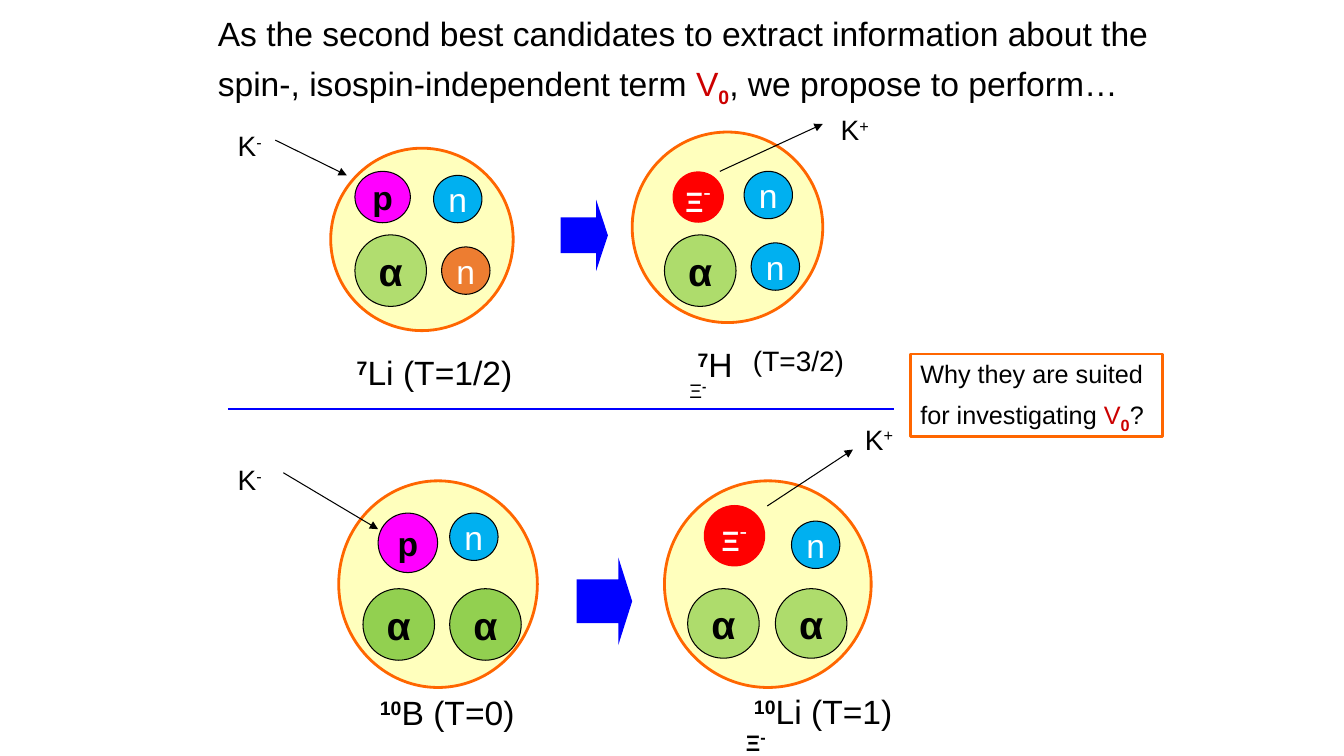
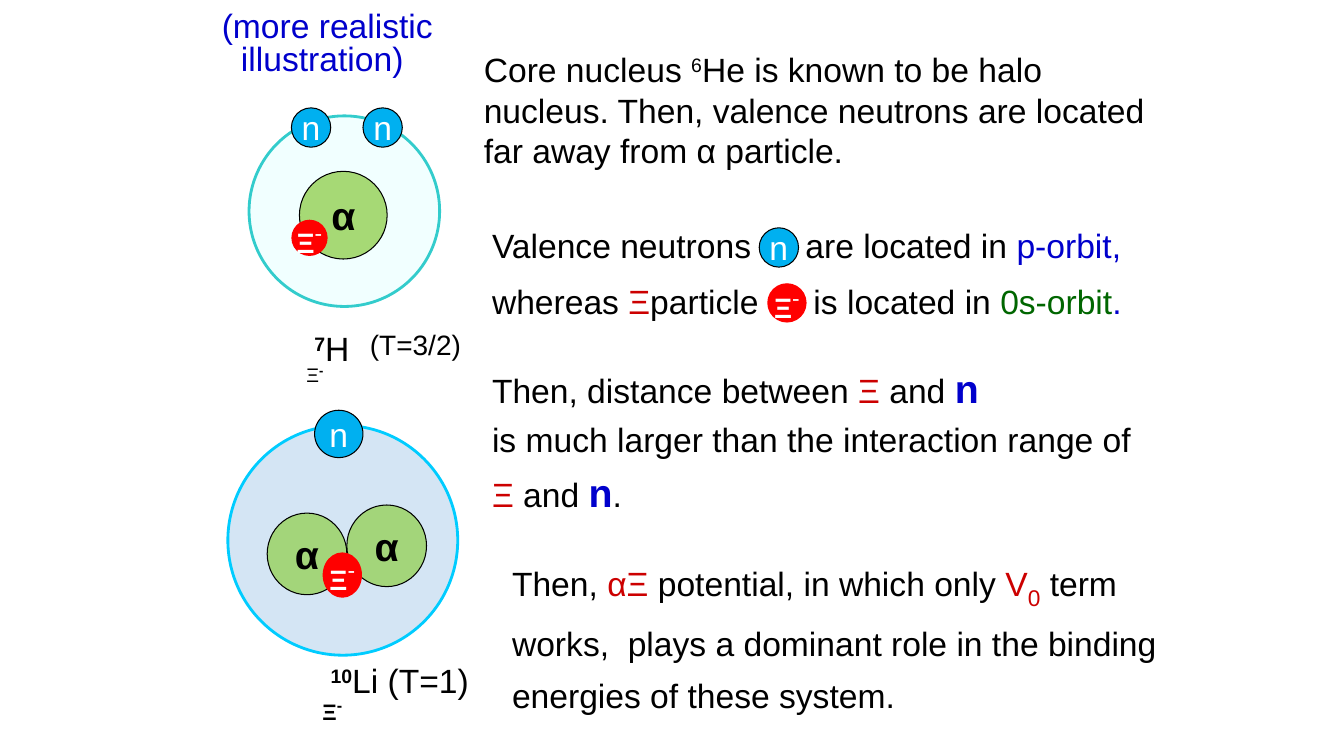
from lxml import etree
from pptx import Presentation
from pptx import util as u
from pptx.dml.color import RGBColor
from pptx.enum import shapes, text
from pptx.oxml import ns

BLACK, WHITE, RED, BLUE = "000000", "FFFFFF", "CC0000", "0000CC"
ORANGE, ARROW_BLUE, GREEN = "FF6600", "0000FF", "006600"
BASE = {"size": 24, "color": BLACK, "bold": False, "name": "Arial"}

# Run formats that recur
SUP = {"baseline": 30}
MASS = {"baseline": 30, "bold": True}
STRONG_N = {"size": 28, "color": BLUE, "bold": True}
XI_RUNS = [("Ξ", {"size": 20, "bold": True, "color": WHITE}),
           ("-", {"size": 28, "color": WHITE, "baseline": 30})]

# kind: (fill, outline, runs)
PARTICLES = {
    "alpha": ("92D050", BLACK, [("α", {"size": 28, "bold": True})]),
    "proton": ("FF00FF", BLACK, [("p", {"bold": True})]),
    "neutron": ("00B0F0", BLACK, [("n", {"color": WHITE})]),
    "struck": ("ED7D31", BLACK, [("n", {"color": WHITE})]),
    "xi": ("FF0000", None, XI_RUNS),
}


def rgb(value):
    return RGBColor.from_string(value)


def inches(*values):
    return [u.Inches(value) for value in values]


def add_xml(parent, tag, **attributes):
    return etree.SubElement(parent, ns.qn(tag), attributes)


# ---- Text ----
def write(frame, paragraphs, wrap=False, anchor=text.MSO_ANCHOR.TOP,
          align=text.PP_ALIGN.LEFT):
    """Each paragraph is (runs, options); each run is (words, format)."""
    settings = {"word_wrap": wrap, "vertical_anchor": anchor,
                "auto_size": text.MSO_AUTO_SIZE.NONE}
    for name, value in settings.items():
        setattr(frame, name, value)
    for index, (runs, options) in enumerate(paragraphs):
        para = frame.paragraphs[0] if index == 0 else frame.add_paragraph()
        layout = {"alignment": align, "line_spacing": options.get("line", 1.0),
                  "space_before": u.Pt(options.get("before", 0))}
        for name, value in layout.items():
            setattr(para, name, value)
        props = para._p.get_or_add_pPr()
        props.set("marL", str(u.Inches(options.get("indent", 0))))
        props.set("indent", "0")
        add_xml(props, "a:buNone")
        for words, changes in runs:
            add_run(para, words, {**BASE, **changes})


def add_run(para, words, style):
    span = para.add_run()
    span.text = words
    for name, value in style.items():
        if name == "color":
            span.font.color.rgb = rgb(value)
        elif name == "baseline":
            span.font._element.set("baseline", str(value * 1000))
        else:
            setattr(span.font, name, u.Pt(value) if name == "size" else value)


def text_block(page, box, paragraphs):
    block = page.shapes.add_textbox(*inches(*box))
    write(block.text_frame, paragraphs, wrap=False)


def label(page, left, top, width, height, runs):
    text_block(page, (left, top, width, height), [(runs, {})])


def fill_placeholder(holder, box, paragraphs):
    holder.left, holder.top, holder.width, holder.height = inches(*box)
    write(holder.text_frame, paragraphs, wrap=True)


# ---- Shapes ----
def add_figure(page, preset, box, fill=None, line=None, weight=0.75, opacity=100):
    figure = page.shapes.add_shape(preset, *inches(*box))
    figure.shadow.inherit = False
    if fill:
        figure.fill.solid()
        figure.fill.fore_color.rgb = rgb(fill)
        if opacity < 100:
            color = figure._element.spPr.find(".//" + ns.qn("a:srgbClr"))
            add_xml(color, "a:alpha", val=str(opacity * 1000))
    else:
        figure.fill.background()
    if line:
        figure.line.color.rgb = rgb(line)
        figure.line.width = u.Pt(weight)
    else:
        figure.line.fill.background()
    return figure


def add_line(page, start, end, color=BLACK, weight=0.75, arrow=True):
    line = page.shapes.add_connector(shapes.MSO_CONNECTOR.STRAIGHT,
                                     *inches(*start, *end))
    line.line.color.rgb = rgb(color)
    line.line.width = u.Pt(weight)
    if arrow:
        add_xml(line.line._get_or_add_ln(), "a:tailEnd", type="triangle")
    add_xml(line._element.spPr, "a:effectLst")


def particle(page, kind, left, top, width, height, opacity=100):
    fill, line, runs = PARTICLES[kind]
    ball = add_figure(page, shapes.MSO_SHAPE.OVAL, (left, top, width, height),
                      fill, line, opacity=opacity)
    write(ball.text_frame, [(runs, {})], anchor=text.MSO_ANCHOR.MIDDLE,
          align=text.PP_ALIGN.CENTER)


def nucleus(page, box, members, fill="FFFF00", line=ORANGE):
    """Draw a nucleus and its members, placed from its top left corner."""
    add_figure(page, shapes.MSO_SHAPE.OVAL, box, fill, line, 2, opacity=26)
    for kind, left, top, *rest in members:
        particle(page, kind, box[0] + left, box[1] + top, *rest)


# ---- Nuclide names ----
def nuclide(page, left, top, mass, symbol, width=1.6):
    label(page, left, top, width, 0.5, [(mass, MASS), (symbol, {})])


def xi_mark(page, left, top, size, bold):
    """Small Ξ below and left of a nuclide name at (left, top)."""
    label(page, left - 0.08, top + 0.32, 0.4, 0.36,
          [("Ξ", {"size": size, "bold": bold}),
           ("-", {"size": size + (4 if bold else 2), **MASS})])


def xi_hydrogen(page, left, top):
    nuclide(page, left, top, "7", "H", 0.57)
    xi_mark(page, left, top, 14, False)
    label(page, left + 0.55, top, 1.1, 0.43, [("(T=3/2)", {"size": 20})])


def xi_lithium(page, left, top):
    nuclide(page, left, top, "10", "Li (T=1)")
    xi_mark(page, left, top, 16, True)


# ---- Reaction panel: target, beam, block arrow, product ----
def reaction(page, left, top, parts):
    def at(box):
        return (left + box[0], top + box[1], *box[2:])

    for side in ("target", "product"):
        box, members = parts[side]
        nucleus(page, at(box), members)
    block = add_figure(page, shapes.MSO_SHAPE.RIGHT_ARROW, at(parts["block"]),
                       ARROW_BLUE)
    block.adjustments[1] = 0.25
    for sign, place, start, end in parts["kaons"]:
        add_line(page, at(start), at(end))
        label(page, *at(place), 0.5, 0.44,
              [("K", {"size": 20}), (sign, {"size": 20, **SUP})])
    nuclide(page, *at(parts["target_name"][0]), *parts["target_name"][1:])
    place, draw_name = parts["product_name"]
    draw_name(page, *at(place))


LITHIUM_REACTION = {
    "target": ((1.02, 0.4, 1.81, 1.81),
               [("alpha", 0.24, 0.86, 0.71, 0.71, 71),
                ("proton", 0.24, 0.23, 0.55, 0.51),
                ("neutron", 1.02, 0.27, 0.48, 0.47),
                ("struck", 1.1, 0.98, 0.48, 0.47)]),
    "product": ((4.01, 0.24, 1.89, 1.89),
                [("alpha", 0.32, 1.02, 0.71, 0.71, 74),
                 ("xi", 0.4, 0.39, 0.51, 0.51),
                 ("neutron", 1.11, 0.39, 0.48, 0.47),
                 ("neutron", 1.18, 1.1, 0.48, 0.47)]),
    "block": (3.3, 0.91, 0.47, 0.71),
    "kaons": [("-", (0, 0.16), (0.47, 0.32), (1.18, 0.67)),
              ("+", (5.98, 0), (4.88, 0.63), (5.9, 0.16))],
    "target_name": ((1.18, 2.37), "7", "Li (T=1/2)", 1.76),
    "product_name": ((4.56, 2.29), xi_hydrogen),
}
BORON_REACTION = {
    "target": ((1.1, 0.63, 1.97, 2.05),
               [("alpha", 0.24, 1.07, 0.71, 0.71),
                ("alpha", 1.1, 1.07, 0.71, 0.71),
                ("proton", 0.39, 0.32, 0.59, 0.59),
                ("neutron", 1.1, 0.32, 0.48, 0.47)]),
    "product": ((4.33, 0.63, 2.05, 2.05),
                [("alpha", 0.23, 1.07, 0.71, 0.69, 74),
                 ("alpha", 1.1, 1.07, 0.71, 0.69, 74),
                 ("xi", 0.39, 0.24, 0.61, 0.61),
                 ("neutron", 1.26, 0.4, 0.48, 0.47)]),
    "block": (3.46, 1.39, 0.55, 0.87),
    "kaons": [("-", (0, 0.4), (0.55, 0.55), (1.49, 1.11)),
              ("+", (6.22, 0), (5.35, 0.88), (6.2, 0.32))],
    "target_name": ((1.41, 2.68), "10", "B (T=0)"),
    "product_name": ((5.12, 2.67), xi_lithium),
}


def question(page, box):
    frame = add_figure(page, shapes.MSO_SHAPE.RECTANGLE, box, line=ORANGE,
                       weight=1.75)
    small = {"size": 18}
    write(frame.text_frame, [
        ([("Why they are suited", small)], {}),
        ([("for investigating ", small), ("V", {**small, "color": RED}),
          ("0", {"size": 20, "color": RED, "bold": True, "baseline": -25}),
          ("?", small)], {"before": 5.4})])


# ---- Slides ----
def reactions_slide(deck):
    page = deck.slides.add_slide(deck.slide_layouts[5])
    fill_placeholder(page.shapes.title, (2.06, 0, 9.61, 1.07), [
        ([("As the second best candidates to extract information about the "
           "spin-, isospin-independent term ", {}), ("V", {"color": RED}),
          ("0", {"color": RED, "bold": True, "baseline": -25}),
          (", we propose to perform…", {})], {"line": 1.2})])
    reaction(page, 2.26, 1.07, LITHIUM_REACTION)
    add_line(page, (2.26, 4.06), (8.87, 4.06), ARROW_BLUE, 1.75, arrow=False)
    reaction(page, 2.26, 4.14, BORON_REACTION)
    question(page, (9.03, 3.51, 2.5, 0.82))


def orbits(page, left, top):
    """Text on orbits; a particle stands in the gap of each of the first lines."""
    red, blue = {"color": RED}, {"color": BLUE}
    fill_placeholder(page.placeholders[1], (left, top, 6.6, 3.02), [
        ([("Valence neutrons", {})], {}),
        ([("whereas ", {}), ("Ξ", red), ("particle", {})], {"line": 1.4}),
        ([("Then, distance between ", {}), ("Ξ ", red), ("and ", {}),
          ("n", STRONG_N)], {"line": 1.9}),
        ([("is much larger than the interaction range of", {})], {"line": 1.2}),
        ([("Ξ", red), (" and ", {}), ("n", STRONG_N), (".", {})], {"line": 1.2})])
    particle(page, "neutron", left + 2.75, top + 0.08, 0.39, 0.39)
    particle(page, "xi", left + 2.83, top + 0.63, 0.39, 0.39)
    text_block(page, (left + 3.11, top, 3.4, 1.1), [
        ([("are located in ", {}), ("p-orbit,", blue)], {}),
        ([("is located in ", {}), ("0s-orbit", {"color": GREEN}), (".", blue)],
         {"line": 1.4, "indent": 0.08})])


def halo_slide(deck):
    page = deck.slides.add_slide(deck.slide_layouts[1])
    red, blue = {"color": RED}, {"color": BLUE}
    fill_placeholder(page.shapes.title, (2.1, 0, 2.45, 0.83), [
        ([("(more realistic", blue)], {}),
        ([("illustration)", blue)], {"line": 0.5, "before": 7.2, "indent": 0.19})])
    # Core nucleus, orbits and conclusion
    text_block(page, (4.7, 0.44, 6.82, 1.31), [
        ([("Core nucleus ", {}), ("6", SUP), ("He is known to be halo", {})], {}),
        ([("nucleus. Then, valence neutrons are located", {})], {}),
        ([("far away from α particle.", {})], {})])
    orbits(page, 4.78, 2.18)
    text_block(page, (4.98, 5.48, 6.75, 1.56), [
        ([("Then, ", {}), ("αΞ", red), (" potential, in which only ", {}),
          ("V", red), ("0", {"size": 28, "color": RED, "baseline": -25}),
          (" term", {})], {}),
        ([("works,  plays a dominant role in the binding", {})], {"line": 1.3}),
        ([("energies of these system.", {})], {"line": 1.3})])
    # Halo nuclei
    nucleus(page, (2.47, 1.15, 1.89, 1.89),
            [("alpha", 0.5, 0.55, 0.87, 0.87, 79), ("xi", 0.42, 1.03, 0.36, 0.36),
             ("neutron", 0.42, -0.08, 0.39, 0.39),
             ("neutron", 1.13, -0.08, 0.39, 0.39)], "CCFFFF", "33CCCC")
    xi_hydrogen(page, 3.02, 3.2)
    nucleus(page, (2.26, 4.22, 2.28, 2.28),
            [("alpha", 0.39, 0.87, 0.79, 0.81, 74),
             ("alpha", 1.18, 0.79, 0.79, 0.81, 74),
             ("neutron", 0.86, -0.15, 0.48, 0.47),
             ("xi", 0.94, 1.26, 0.39, 0.45)], "5B9BD5", "00CCFF")
    xi_lithium(page, 3.18, 6.5)


def main():
    deck = Presentation()
    deck.slide_width, deck.slide_height = inches(13.33, 7.5)
    reactions_slide(deck)
    halo_slide(deck)
    deck.save("out.pptx")


if __name__ == "__main__":
    main()
